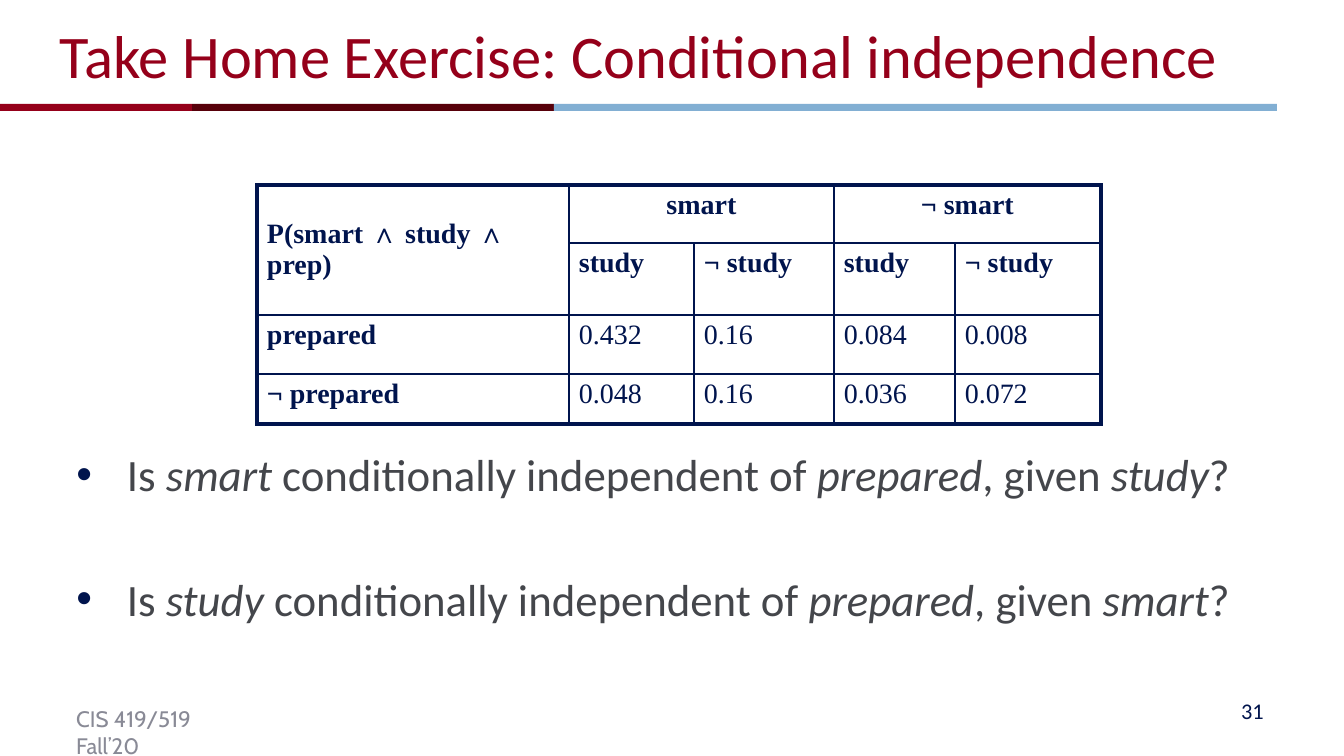
from dataclasses import dataclass
from itertools import accumulate

from lxml.etree import SubElement
from pptx import Presentation
from pptx.dml.color import RGBColor
from pptx.enum.shapes import MSO_SHAPE
from pptx.enum.text import MSO_ANCHOR, MSO_AUTO_SIZE, PP_ALIGN
from pptx.oxml import parse_xml
from pptx.oxml.ns import nsdecls, qn
from pptx.util import Pt

TITLE = "Take Home Exercise: Conditional independence"
COURSE = "CIS 419/519 Fall’20"
PAGE = "31"

# Every second piece of a question is a variable, set in italics.
QUESTIONS = [
    ("Is ", "smart", " conditionally independent of ", "prepared", ", given ", "study", "?"),
    ("Is ", "study", " conditionally independent of ", "prepared", ", given ", "smart", "?"),
]

PROBABILITIES = [
    ["P(smart ∧ study ∧ prep)", "smart", "", "¬ smart", ""],
    ["", "study", "¬ study", "study", "¬ study"],
    ["prepared", "0.432", "0.16", "0.084", "0.008"],
    ["¬ prepared", "0.048", "0.16", "0.036", "0.072"],
]
MERGES = [((0, 0), (1, 0)), ((0, 1), (0, 2)), ((0, 3), (0, 4))]
HEADER_ROWS = 2


@dataclass(frozen=True)
class Theme:
    red: str = "95001A"
    maroon: str = "57000A"
    sky: str = "82AFD3"
    navy: str = "00144D"
    body: str = "44464B"
    muted: str = "898A96"
    sans: str = "Calibri"
    serif: str = "Times New Roman"
    footer: str = "Cabin"
    title_size: float = 32.4
    body_size: int = 24
    table_size: int = 15
    small_size: int = 12
    question_gap: int = 38
    frame_line: float = 2.25
    grid_line: float = 1


THEME = Theme()
PX = 914400 / 134.4

SLIDE = (1344, 756)
TITLE_BOX = (46, 3, 1210, 102)
BODY_BOX = (63, 440, 1210, 235)
COURSE_BOX = (63, 699, 204, 40)
PAGE_BOX = (964, 691, 313, 40)
STRIPE_TOP, STRIPE_HEIGHT = 104, 7
STRIPE_EDGES = [-1, 192, 554, 1277]
STRIPE_COLORS = [THEME.red, THEME.maroon, THEME.sky]
TABLE_LEFT, TABLE_TOP = 257, 185
COLUMNS = [312, 125, 140, 121, 146]
ROWS = [58, 72, 59, 50]
CELL_INSET = (10, 5)


def emu(px):
    return round(px * PX)


def style(paragraph, face, size, color, bold=False, align=PP_ALIGN.LEFT):
    font = paragraph.font
    font.name, font.size, font.bold = face, Pt(size), bold
    font.color.rgb = RGBColor.from_string(color)
    paragraph.alignment = align


def place(shape, box):
    shape.left, shape.top, shape.width, shape.height = map(emu, box)
    shape.text_frame.auto_size = MSO_AUTO_SIZE.NONE
    shape.text_frame.word_wrap = True


def add_label(slide, text, box, face, color, align, anchor):
    label = slide.shapes.add_textbox(*map(emu, box))
    place(label, box)
    label.text_frame.vertical_anchor = anchor
    label.text_frame.text = text
    style(label.text_frame.paragraphs[0], face, THEME.small_size, color, align=align)


def add_stripes(slide):
    for left, right, color in zip(STRIPE_EDGES, STRIPE_EDGES[1:], STRIPE_COLORS):
        box = (left, STRIPE_TOP, right - left, STRIPE_HEIGHT)
        stripe = slide.shapes.add_shape(MSO_SHAPE.RECTANGLE, *map(emu, box))
        stripe.shadow.inherit = False
        stripe.fill.solid()
        stripe.fill.fore_color.rgb = RGBColor.from_string(color)
        stripe.line.fill.background()


def fill_title(title):
    place(title, TITLE_BOX)
    title.text_frame.vertical_anchor = MSO_ANCHOR.MIDDLE
    title.text_frame.text = TITLE
    style(title.text_frame.paragraphs[0], THEME.sans, THEME.title_size, THEME.red)


def fill_questions(body):
    place(body, BODY_BOX)
    for number, pieces in enumerate(QUESTIONS):
        frame = body.text_frame
        question = frame.add_paragraph() if number else frame.paragraphs[0]
        for index, piece in enumerate(pieces):
            run = question.add_run()
            run.text = piece
            run.font.italic = index % 2 == 1
        style(question, THEME.sans, THEME.body_size, THEME.body)
        bullet_color = SubElement(question._p.get_or_add_pPr(), qn("a:buClr"))
        SubElement(bullet_color, qn("a:srgbClr"), val=THEME.navy)
        if number:
            question.space_before = Pt(THEME.question_gap)


def set_borders(cell, row, column):
    """Heavy lines around the table, fine lines inside it."""
    on_frame = {
        "L": column == 0,
        "R": column + cell.span_width == len(COLUMNS),
        "T": row == 0,
        "B": row + cell.span_height == len(ROWS),
    }
    for index, (side, outer) in enumerate(on_frame.items()):
        width = Pt(THEME.frame_line if outer else THEME.grid_line)
        cell._tc.get_or_add_tcPr().insert(index, parse_xml(
            f'<a:ln{side} {nsdecls("a")} w="{width}"><a:solidFill>'
            f'<a:srgbClr val="{THEME.navy}"/></a:solidFill></a:ln{side}>'))


def add_probabilities(slide):
    box = (TABLE_LEFT, TABLE_TOP, sum(COLUMNS), sum(ROWS))
    table = slide.shapes.add_table(len(ROWS), len(COLUMNS), *map(emu, box)).table
    table.first_row = table.horz_banding = False
    for column, width in zip(table.columns, COLUMNS):
        column.width = emu(width)
    for row, height in zip(table.rows, ROWS):
        row.height = emu(height)
    for first, last in MERGES:
        table.cell(*first).merge(table.cell(*last))

    for row, texts in enumerate(PROBABILITIES):
        for column, text in enumerate(texts):
            cell = table.cell(row, column)
            cell.fill.background()
            set_borders(cell, row, column)
            cell.margin_left = cell.margin_right = emu(CELL_INSET[0])
            cell.margin_top = cell.margin_bottom = emu(CELL_INSET[1])
            if cell.is_spanned:
                continue
            cell.text = text
            if cell.span_height > 1:
                cell.vertical_anchor = MSO_ANCHOR.MIDDLE
            style(cell.text_frame.paragraphs[0], THEME.serif, THEME.table_size, THEME.navy,
                  bold=row < HEADER_ROWS or column == 0,
                  align=PP_ALIGN.CENTER if cell.span_width > 1 else PP_ALIGN.LEFT)


def main():
    deck = Presentation()
    deck.slide_width, deck.slide_height = map(emu, SLIDE)
    slide = deck.slides.add_slide(deck.slide_layouts[1])
    add_label(slide, COURSE, COURSE_BOX, THEME.footer, THEME.muted,
              PP_ALIGN.LEFT, MSO_ANCHOR.TOP)
    add_stripes(slide)
    add_label(slide, PAGE, PAGE_BOX, THEME.sans, THEME.navy,
              PP_ALIGN.RIGHT, MSO_ANCHOR.MIDDLE)
    fill_title(slide.shapes.title)
    fill_questions(slide.placeholders[1])
    add_probabilities(slide)
    deck.save("out.pptx")


if __name__ == "__main__":
    main()
